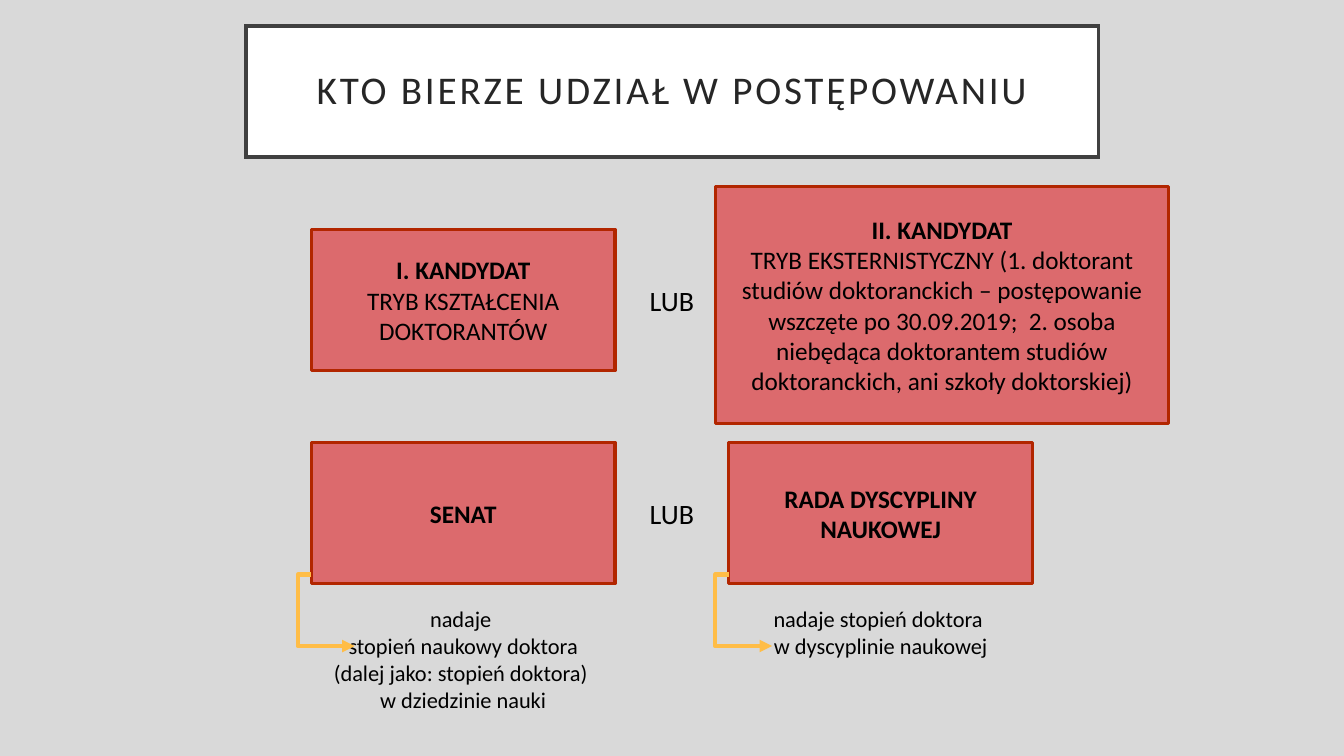
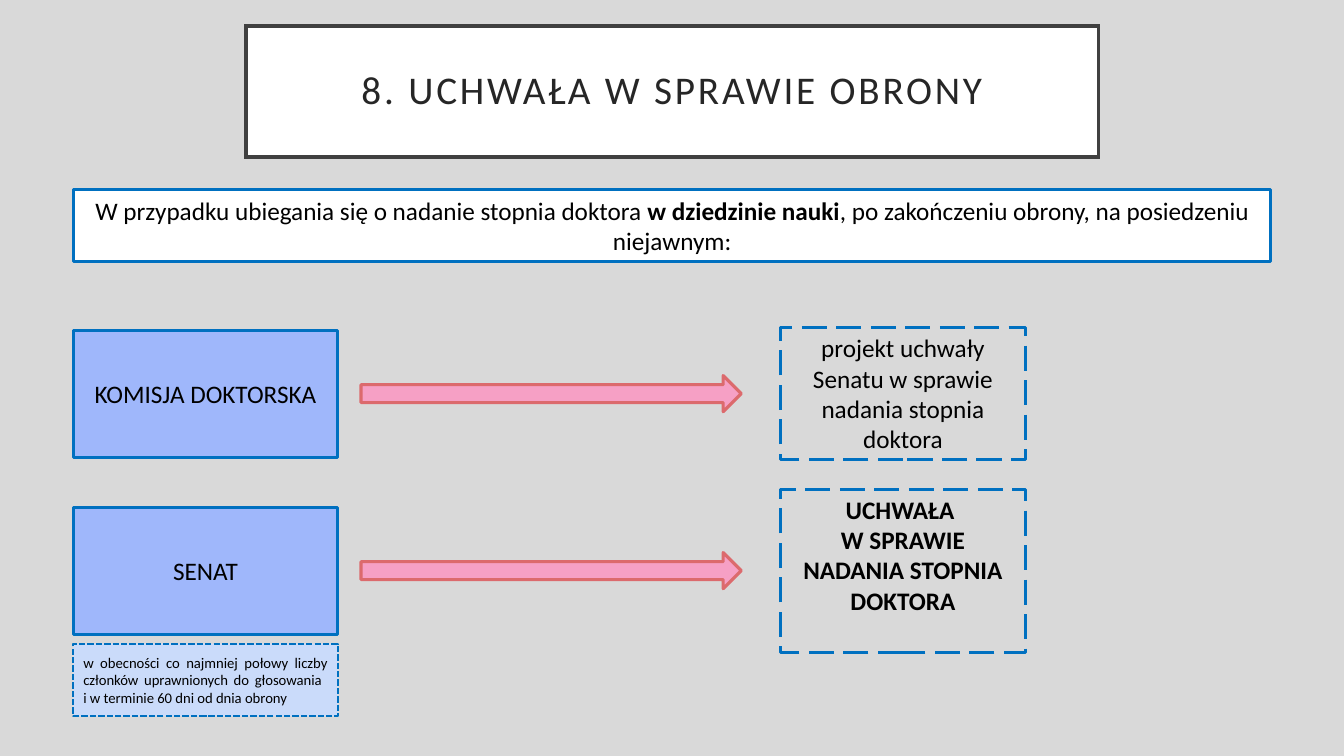
from lxml import etree
from pptx import Presentation
from pptx.dml.color import RGBColor
from pptx.enum.dml import MSO_LINE
from pptx.enum.shapes import MSO_CONNECTOR, MSO_SHAPE
from pptx.enum.text import MSO_ANCHOR, PP_ALIGN
from pptx.oxml.ns import qn
from pptx.util import Cm, Pt

RECT, ARROW = MSO_SHAPE.RECTANGLE, MSO_SHAPE.RIGHT_ARROW
ELBOW = MSO_CONNECTOR.ELBOW
CENTER, JUSTIFY = PP_ALIGN.CENTER, PP_ALIGN.JUSTIFY
TOP, MIDDLE = MSO_ANCHOR.TOP, MSO_ANCHOR.MIDDLE
LONG_DASH, SHORT_DASH = MSO_LINE.LONG_DASH, MSO_LINE.SQUARE_DOT

FONT = "Calibri"
GREY, WHITE, BLACK = "D9D9D9", "FFFFFF", "000000"
FRAME, TITLE_INK = "404040", "262626"
RED, DARK_RED, AMBER = "DC6A6D", "B22600", "FFBD47"
BLUE, PERIWINKLE, PALE_BLUE, PINK = "0070C0", "9FB7FB", "CADBFA", "F6A0C5"

TITLE_BOX = (6.2, 0.66, 21.48, 3.3)
PARTY_W, PARTY_H = 7.65, 3.56
BODY_W, BODY_H = 6.66, 3.2


def rgb(value):
    """Turn a hex string into a colour."""
    return RGBColor.from_string(value)


def write(tf, *paragraphs, size=18, color=BLACK, bold=False, align=CENTER,
          anchor=MIDDLE, spacing=None, tracking=0, inset=None):
    """Fill a frame; a paragraph is a string or a list of (text, bold) parts."""
    tf.word_wrap = True
    tf.vertical_anchor = anchor
    if inset is not None:
        tf.margin_left = tf.margin_right = Cm(inset)
        tf.margin_top = tf.margin_bottom = Cm(inset)
    for i, parts in enumerate(paragraphs):
        p = tf.add_paragraph() if i else tf.paragraphs[0]
        p.alignment = align
        if spacing:
            p.line_spacing = spacing
        for text, strong in [(parts, bold)] if isinstance(parts, str) else parts:
            for j, line in enumerate(text.split("\n")):
                if j:
                    p.add_line_break()
                r = p.add_run()
                r.text = line
                r.font.name, r.font.size, r.font.bold = FONT, Pt(size), strong
                r.font.color.rgb = rgb(color)
                if tracking:
                    r.font._element.set("spc", str(tracking * 100))


def add_box(s, box, *paragraphs, kind=RECT, fill=None, line=BLUE, width=2.25,
            dash=None, **text_format):
    """Draw an outlined shape and write its text."""
    sp = s.shapes.add_shape(kind, *map(Cm, box))
    sp.shadow.inherit = False
    if fill:
        sp.fill.solid()
        sp.fill.fore_color.rgb = rgb(fill)
    else:
        sp.fill.background()
    sp.line.color.rgb = rgb(line)
    sp.line.width = Pt(width)
    if dash:
        sp.line.dash_style = dash
    if paragraphs:
        write(sp.text_frame, *paragraphs, **text_format)
    return sp


def add_label(s, box, text, **text_format):
    """Place a text box."""
    sp = s.shapes.add_textbox(*map(Cm, box))
    write(sp.text_frame, text, **text_format)


def add_hook(s, x, y, dx, dy):
    """Draw an elbow arrow that swings out to the left of its start."""
    c = s.shapes.add_connector(ELBOW, Cm(x), Cm(y), Cm(x + dx), Cm(y + dy))
    c.line.color.rgb = rgb(AMBER)
    c.line.width = Pt(3)
    pr = c._element.spPr
    guides = pr.find(qn("a:prstGeom")).get_or_add_avLst()
    etree.SubElement(guides, qn("a:gd"), name="adj1", fmla="val -32000")
    etree.SubElement(pr.find(qn("a:ln")), qn("a:tailEnd"), type="triangle")
    etree.SubElement(pr, qn("a:effectLst"))


def add_titled_slide(prs, title):
    """Add a blank slide with the square-cornered title frame."""
    s = prs.slides.add_slide(prs.slide_layouts[6])
    sp = add_box(s, TITLE_BOX, title, fill=WHITE, line=FRAME, width=2.5, size=28,
                 color=TITLE_INK, spacing=0.9, tracking=2, inset=0.5)
    outline = sp._element.spPr.find(qn("a:ln"))
    etree.SubElement(outline, qn("a:miter"), lim="800000")
    return s


def add_party(s, box, *paragraphs):
    """Draw a red box for someone who takes part."""
    add_box(s, box, *paragraphs, fill=RED, line=DARK_RED, bold=True)


def add_authority(s, x, y, name, power, note_h):
    """Draw an authority with a hook to the degree it confers."""
    note_w = 7.15
    add_party(s, (x, y, PARTY_W, PARTY_H), name)
    add_label(s, (x + (PARTY_W - note_w) / 2, y + 3.98, note_w, note_h), power,
              size=16, anchor=TOP)
    add_hook(s, x, y + 3.33, 1.09, 1.8)


def add_step(s, x, y, body, outcome, outcome_top, outcome_h, bold=False):
    """Draw a body, an arrow and the dashed outcome."""
    arrow_h = 0.91
    add_box(s, (x, y, BODY_W, BODY_H), body, fill=PERIWINKLE)
    add_box(s, (x + 7.25, y + (BODY_H - arrow_h) / 2, 9.58, arrow_h),
            kind=ARROW, fill=PINK, line=RED)
    add_box(s, (x + 17.82, outcome_top, 6.17, outcome_h), outcome,
            dash=LONG_DASH, anchor=TOP, bold=bold)


def build_participants(prs):
    """Build the slide on who takes part."""
    s = add_titled_slide(prs, "KTO BIERZE UDZIAŁ W POSTĘPOWANIU")
    left, right, candidates, authorities = 7.85, 18.37, 5.78, 11.15
    add_party(s, (left, candidates, PARTY_W, PARTY_H), "I. KANDYDAT",
              [("TRYB KSZTAŁCENIA DOKTORANTÓW", False)])
    add_party(s, (18.03, 4.7, 11.42, 5.97), "II. KANDYDAT",
              [("TRYB EKSTERNISTYCZNY (1. doktorant studiów doktoranckich – "
                "postępowanie wszczęte po 30.09.2019;  2. osoba niebędąca "
                "doktorantem studiów doktoranckich, ani szkoły doktorskiej)", False)])
    add_authority(s, left, authorities, "SENAT",
                  "nadaje \nstopień naukowy doktora (dalej jako: stopień doktora) "
                  "\nw dziedzinie nauki", 3)
    add_authority(s, right, authorities, "RADA DYSCYPLINY NAUKOWEJ",
                  "nadaje stopień doktora \nw dyscyplinie naukowej", 1.63)
    for y in (candidates, authorities):
        add_label(s, (16.02, y + (PARTY_H - 1.1) / 2, 1.83, 1.12), "LUB", size=20)


def build_resolution(prs):
    """Build the slide on the resolution after the defence."""
    s = add_titled_slide(prs, "8. UCHWAŁA W SPRAWIE OBRONY")
    left = 1.85
    add_box(s, (left, 4.77, 30.18, 1.83),
            [("W przypadku ubiegania się o nadanie stopnia doktora ", False),
             ("w dziedzinie nauki", True),
             (", po zakończeniu obrony, na posiedzeniu niejawnym:", False)],
            fill=WHITE)
    add_step(s, left, 8.32, "KOMISJA DOKTORSKA",
             "projekt uchwały Senatu w sprawie nadania stopnia doktora", 8.26, 3.33)
    add_step(s, left, 12.78, "SENAT",
             "UCHWAŁA \nW SPRAWIE NADANIA STOPNIA DOKTORA", 12.33, 4.11, bold=True)
    add_box(s, (left, 16.22, BODY_W, 1.83),
            "w obecności co najmniej połowy liczby członków uprawnionych "
            "do głosowania \ni w terminie 60 dni od dnia obrony",
            fill=PALE_BLUE, width=1.5, dash=SHORT_DASH, size=10.5, align=JUSTIFY)


def main():
    """Build and save the presentation."""
    prs = Presentation()
    prs.slide_width, prs.slide_height = Cm(33.87), Cm(19.05)
    background = prs.slide_master.background.fill
    background.solid()
    background.fore_color.rgb = rgb(GREY)
    build_participants(prs)
    build_resolution(prs)
    prs.save("out.pptx")


if __name__ == "__main__":
    main()
